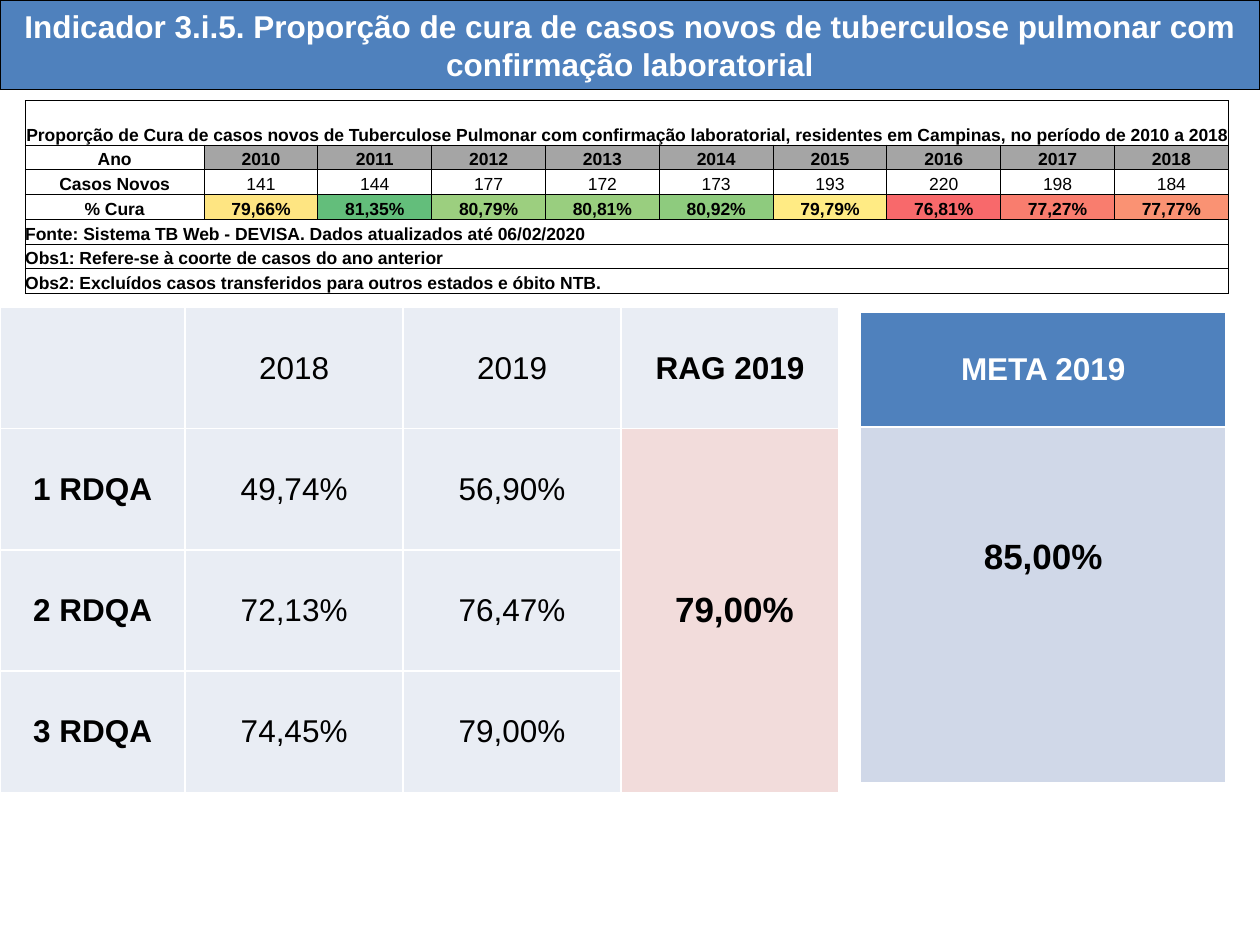
from lxml import etree
from pptx import Presentation
from pptx.dml.color import RGBColor
from pptx.enum import text
from pptx.oxml.ns import qn
from pptx.util import Inches, Pt

FONT = "Arial"
BLACK = RGBColor(0x00, 0x00, 0x00)
WHITE = RGBColor(0xFF, 0xFF, 0xFF)
BLUE = RGBColor(0x4F, 0x81, 0xBD)
LIGHT_BLUE = RGBColor(0xD0, 0xD8, 0xE8)
PALE_BLUE = RGBColor(0xE9, 0xED, 0xF4)
PINK = RGBColor(0xF2, 0xDC, 0xDB)
GREY = RGBColor(0xA5, 0xA5, 0xA5)

CENTER = text.PP_ALIGN.CENTER
LEFT = text.PP_ALIGN.LEFT
MIDDLE = text.MSO_ANCHOR.MIDDLE
BOTTOM = text.MSO_ANCHOR.BOTTOM
TOP = text.MSO_ANCHOR.TOP

HISTORY_TITLE = (
    "Proporção de Cura de casos novos de Tuberculose Pulmonar com confirmação "
    "laboratorial, residentes em Campinas, no período de 2010 a 2018"
)
HISTORY = [  # year, new cases, cure rate, colour of the rate
    ("2010", "141", "79,66%", RGBColor(0xFE, 0xE5, 0x82)),
    ("2011", "144", "81,35%", RGBColor(0x63, 0xBE, 0x7B)),
    ("2012", "177", "80,79%", RGBColor(0x9C, 0xCF, 0x7F)),
    ("2013", "172", "80,81%", RGBColor(0x99, 0xCE, 0x7F)),
    ("2014", "173", "80,92%", RGBColor(0x8E, 0xCB, 0x7E)),
    ("2015", "193", "79,79%", RGBColor(0xFF, 0xEB, 0x84)),
    ("2016", "220", "76,81%", RGBColor(0xF8, 0x69, 0x6B)),
    ("2017", "198", "77,27%", RGBColor(0xF9, 0x7D, 0x6E)),
    ("2018", "184", "77,77%", RGBColor(0xFA, 0x92, 0x73)),
]
HISTORY_NOTES = [
    "Fonte: Sistema TB Web - DEVISA. Dados atualizados até 06/02/2020",
    "Obs1: Refere-se à coorte de casos do ano anterior",
    "Obs2: Excluídos casos transferidos para outros estados e óbito NTB.",
]
RESULTS = [
    ("", "2018", "2019", "RAG 2019"),
    ("1 RDQA", "49,74%", "56,90%", "79,00%"),
    ("2 RDQA", "72,13%", "76,47%", ""),
    ("3 RDQA", "74,45%", "79,00%", ""),
]


def format_paragraph(paragraph, size, color=BLACK, bold=False, align=CENTER):
    paragraph.alignment = align
    font = paragraph.font
    font.name, font.size, font.bold = FONT, Pt(size), bold
    font.color.rgb = color


def set_borders(cell, color, width):
    properties = cell._tc.get_or_add_tcPr()
    for index, side in enumerate(("lnL", "lnR", "lnT", "lnB")):
        line = etree.Element(qn(f"a:{side}"), w=str(Pt(width)))
        fill = etree.SubElement(line, qn("a:solidFill"))
        etree.SubElement(fill, qn("a:srgbClr"), val=str(color))
        properties.insert(index, line)


def add_plain_table(slide, box, widths, heights, border_color, border_width):
    """Add a table without style bands, empty margins and even borders."""
    table = slide.shapes.add_table(
        len(heights), len(widths), *(Inches(length) for length in box)
    ).table
    table.first_row = table.horz_banding = False
    for column, width in zip(table.columns, widths):
        column.width = Inches(width)
    for row, height in zip(table.rows, heights):
        row.height = Inches(height)
    for cell in table.iter_cells():
        cell.margin_left = cell.margin_right = 0
        cell.margin_top = cell.margin_bottom = 0
        cell.fill.background()
        set_borders(cell, border_color, border_width)
    return table


def fill_cell(cell, words, size, fill=None, anchor=MIDDLE, **style):
    cell.text = words
    cell.vertical_anchor = anchor
    format_paragraph(cell.text_frame.paragraphs[0], size, **style)
    if fill is not None:
        cell.fill.solid()
        cell.fill.fore_color.rgb = fill


def add_title(slide, box):
    title = slide.shapes.title
    title.left, title.top, title.width, title.height = map(Inches, box)
    title.fill.solid()
    title.fill.fore_color.rgb = BLUE
    title.line.color.rgb = BLACK
    title.line.width = Pt(0.75)
    frame = title.text_frame
    frame.text = (
        "Indicador 3.i.5. Proporção de cura de casos novos de tuberculose "
        "pulmonar com confirmação laboratorial"
    )
    frame.word_wrap = True
    frame.auto_size = text.MSO_AUTO_SIZE.NONE
    frame.vertical_anchor = MIDDLE
    format_paragraph(frame.paragraphs[0], 18, WHITE, bold=True)


def add_history_table(slide, box):
    label_width, title_height = 1.42, 0.35
    year_width = (box[2] - label_width) / len(HISTORY)
    row_height = (box[3] - title_height) / 6
    table = add_plain_table(
        slide, box, [label_width] + [year_width] * len(HISTORY),
        [title_height] + [row_height] * 6, BLACK, 0.5,
    )

    def put(row, column, words, fill=None, bold=True, align=CENTER):
        fill_cell(table.cell(row, column), words, 10, fill, BOTTOM, bold=bold, align=align)

    def put_across(row, words, align):
        table.cell(row, 0).merge(table.cell(row, len(HISTORY)))
        put(row, 0, words, align=align)

    put_across(0, HISTORY_TITLE, CENTER)
    for row, label in enumerate(("Ano", "Casos Novos", "% Cura"), 1):
        put(row, 0, label)
    for column, (year, cases, rate, color) in enumerate(HISTORY, 1):
        put(1, column, year, GREY)
        put(2, column, cases, bold=False)
        put(3, column, rate, color)
    for row, note in enumerate(HISTORY_NOTES, 4):
        put_across(row, note, LEFT)


def add_results_table(slide, box):
    label_width = 1.47
    table = add_plain_table(
        slide, box, [label_width] + [(box[2] - label_width) / 3] * 3,
        [box[3] / len(RESULTS)] * len(RESULTS), WHITE, 1,
    )
    for row, values in enumerate(RESULTS):
        for column, words in enumerate(values):
            fill_cell(table.cell(row, column), words, 18, PALE_BLUE, bold=column in (0, 3))
    year_result = table.cell(1, 3)
    year_result.merge(table.cell(3, 3))
    fill_cell(year_result, RESULTS[1][3], 20, PINK, bold=True)
    year_result.margin_left = Inches(0.07)


def add_target_table(slide, box):
    header_height = 0.91
    table = add_plain_table(
        slide, box, [box[2]], [header_height, box[3] - header_height], WHITE, 1
    )
    fill_cell(table.cell(0, 0), "META 2019", 18, BLUE, color=WHITE, bold=True)
    target = table.cell(1, 0)
    fill_cell(target, "85,00%", 20, LIGHT_BLUE, TOP, bold=True)
    target.margin_top = Inches(0.88)


def main():
    presentation = Presentation()
    presentation.slide_width, presentation.slide_height = Inches(10), Inches(7.5)
    slide = presentation.slides.add_slide(presentation.slide_layouts[5])
    add_title(slide, (0, 0, 10, 0.71))
    add_results_table(slide, (0, 2.44, 6.66, 3.85))
    add_target_table(slide, (6.83, 2.48, 2.9, 3.73))
    add_history_table(slide, (0.2, 0.8, 9.55, 1.53))
    presentation.save("out.pptx")


if __name__ == "__main__":
    main()
